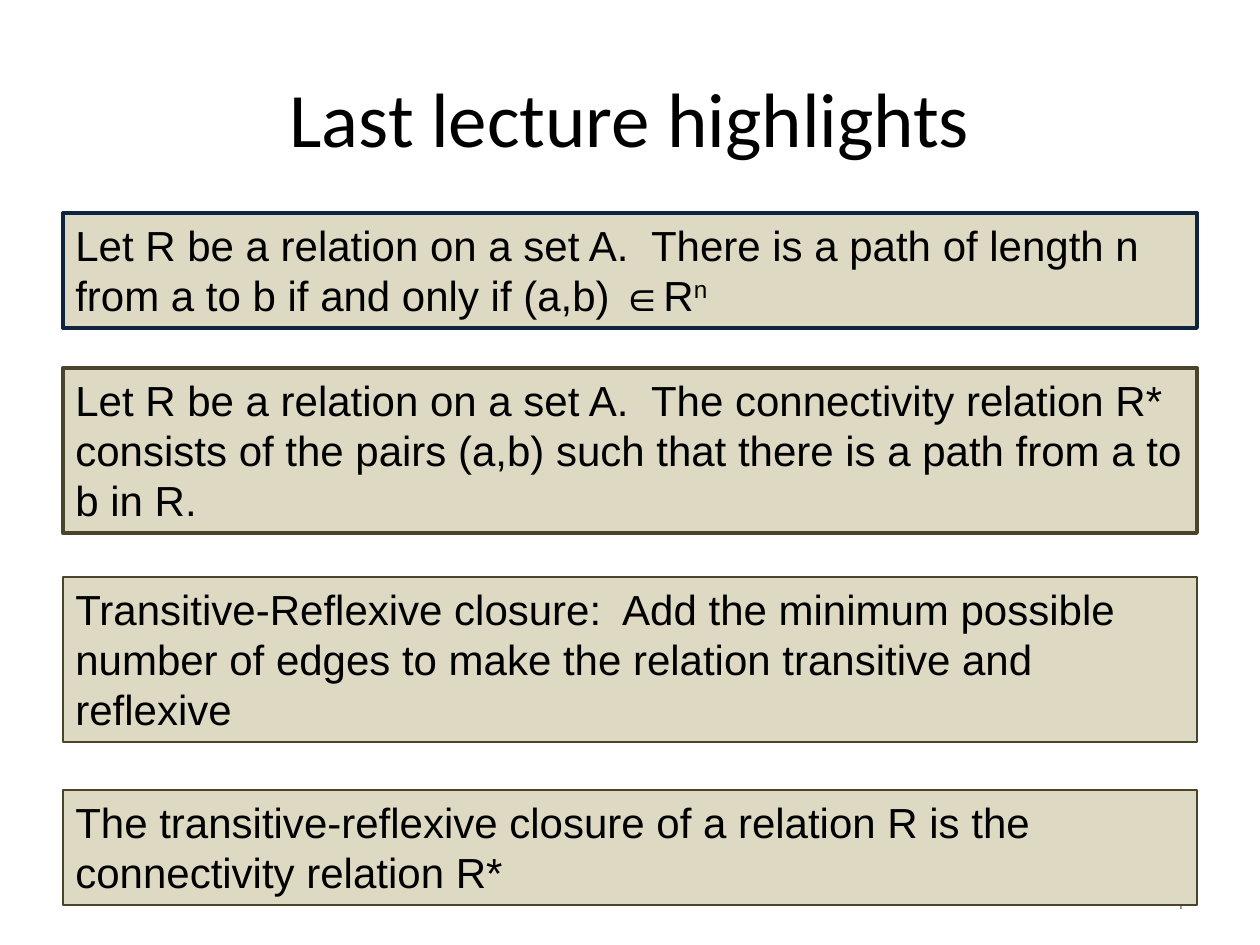
from dataclasses import dataclass

from pptx import Presentation
from pptx.dml.color import RGBColor
from pptx.enum.shapes import MSO_SHAPE
from pptx.enum.text import MSO_ANCHOR as ANCHOR, PP_ALIGN as ALIGN
from pptx.util import Emu, Pt

TITLE = "Last lecture highlights"
PAGE_NUMBER = "4"

# top px, line colour name, line width pt, text lines, text, superscript
HIGHLIGHTS = [
    (213, "navy", 2.25, 2,
     "Let R be a relation on a set A.  There is a path of length n "
     "from a to b if and only if (a,b) ∈R", "n"),
    (368, "olive", 2.25, 3,
     "Let R be a relation on a set A.  The connectivity relation R* consists "
     "of the pairs (a,b) such that there is a path from a to b in R.", ""),
    (577, "olive", 1.5, 3,
     "Transitive-Reflexive closure:  Add the minimum possible number of edges "
     "to make the relation transitive and reflexive", ""),
    (790, "olive", 1.5, 2,
     "The transitive-reflexive closure of a relation R is the connectivity "
     "relation R*", ""),
]


@dataclass(frozen=True)
class Theme:
    black: str = "000000"
    grey: str = "8C8C8C"
    sand: str = "DDD9C3"
    navy: str = "0F243E"
    olive: str = "4A452A"
    title_font: str = "Calibri"
    body_font: str = "Arial"
    title_size: int = 44
    body_size: int = 24
    number_size: int = 12


THEME = Theme()
PX_PER_INCH = 126
LEFT, WIDTH = 63, 1134
LINE_HEIGHT, BOX_PADDING = 50, 15


def px(length):
    return Emu(round(length * 914400 / PX_PER_INCH))


def color(name):
    return RGBColor.from_string(getattr(THEME, name))


def place(shape, left, top, width, height):
    box = dict(left=left, top=top, width=width, height=height)
    for name, value in box.items():
        setattr(shape, name, px(value))


def write(shape, text, font, size, color_name, align, anchor, superscript=""):
    frame = shape.text_frame
    frame.word_wrap = True
    frame.vertical_anchor = anchor
    paragraph = frame.paragraphs[0]
    paragraph.alignment = align
    for part, raised in ((text, False), (superscript, True)):
        if not part:
            continue
        run = paragraph.add_run()
        run.text = part
        for name, value in dict(name=font, size=Pt(size)).items():
            setattr(run.font, name, value)
        run.font.color.rgb = color(color_name)
        if raised:
            run._r.get_or_add_rPr().set("baseline", "30000")


def add_highlight(slide, top, line_color, line_width, lines, text, superscript):
    height = lines * LINE_HEIGHT + BOX_PADDING
    shape = slide.shapes.add_shape(MSO_SHAPE.RECTANGLE, 0, 0, 0, 0)
    place(shape, LEFT, top, WIDTH, height)
    shape.shadow.inherit = False
    shape.fill.solid()
    shape.fill.fore_color.rgb = color("sand")
    shape.line.color.rgb = color(line_color)
    shape.line.width = Pt(line_width)
    write(shape, text, THEME.body_font, THEME.body_size, "black",
          ALIGN.LEFT, ANCHOR.TOP, superscript)


def main():
    presentation = Presentation()
    presentation.slide_width = px(1260)
    presentation.slide_height = px(945)
    slide = presentation.slides.add_slide(presentation.slide_layouts[5])

    title = slide.shapes.title
    place(title, LEFT, 38, WIDTH, 157)
    write(title, TITLE, THEME.title_font, THEME.title_size, "black",
          ALIGN.CENTER, ANCHOR.MIDDLE)

    number = slide.shapes.add_textbox(0, 0, 0, 0)
    place(number, 903, 876, 294, 50)
    write(number, PAGE_NUMBER, THEME.body_font, THEME.number_size, "grey",
          ALIGN.RIGHT, ANCHOR.MIDDLE)

    for highlight in HIGHLIGHTS:
        add_highlight(slide, *highlight)
    presentation.save("out.pptx")


if __name__ == "__main__":
    main()
